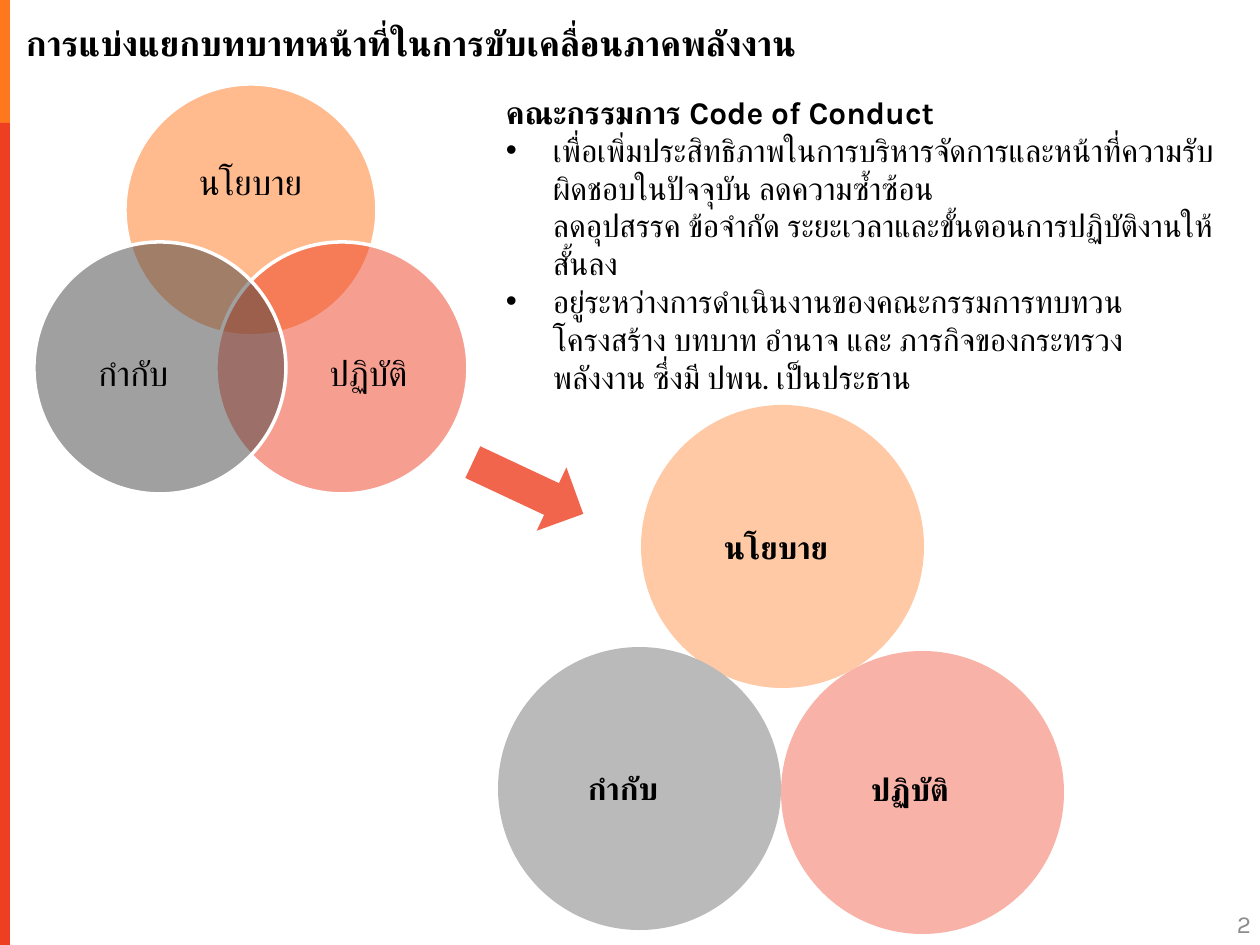
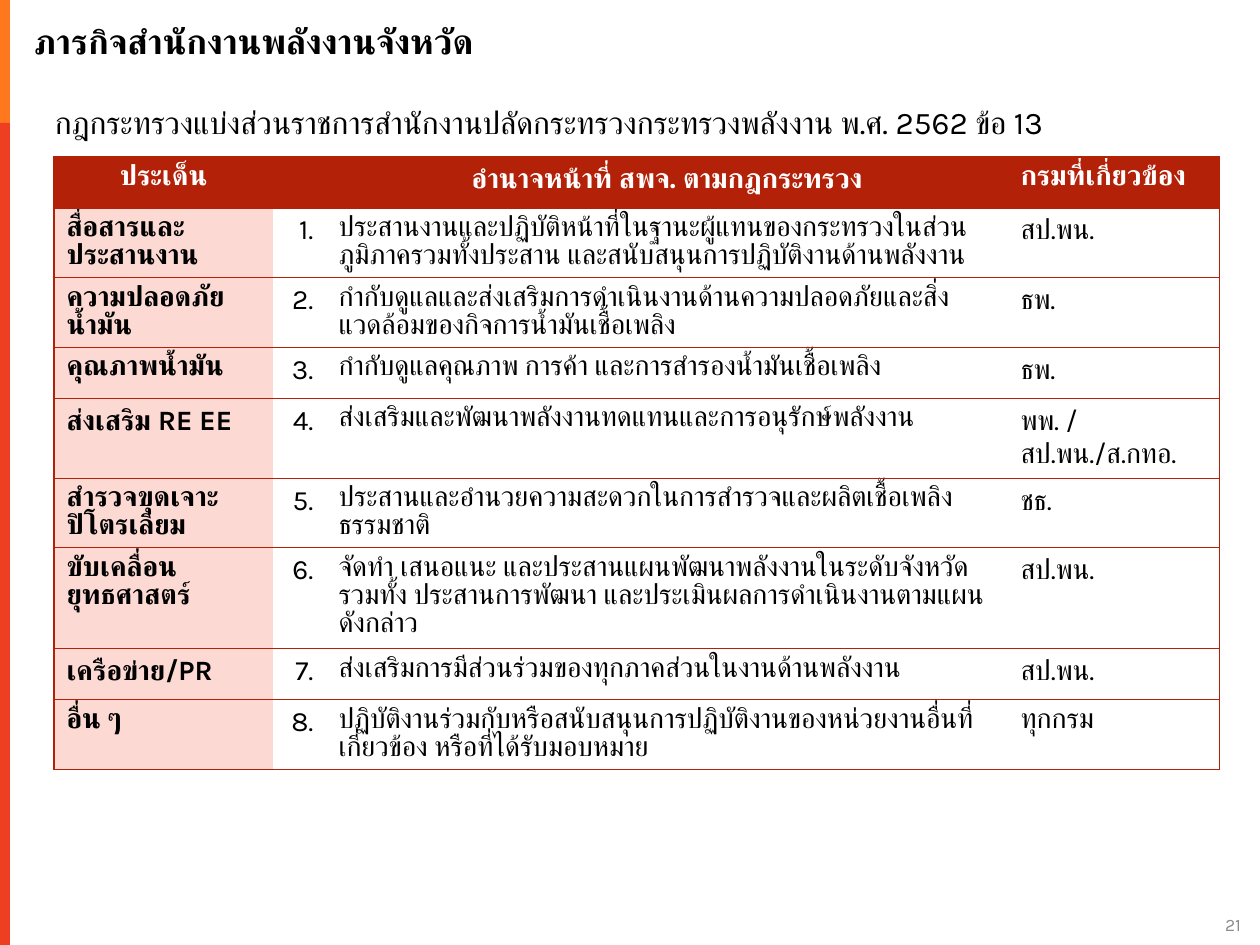
from pptx import Presentation
from pptx.dml.color import RGBColor
from pptx.enum.shapes import MSO_SHAPE
from pptx.enum.text import MSO_ANCHOR, PP_ALIGN
from pptx.oxml.ns import qn
from pptx.util import Emu, Pt
from lxml.etree import SubElement

PX = 914400 / 126
FONT = "Karla"
COLORS = {
    "orange": "FF781E", "red": "EE3F22", "gray": "434343", "arrow": "F2654D",
    "pale_orange": "FFC9A5", "pale_red": "F8B2A7", "pale_gray": "BABABA",
    "header": "B32109", "topic": "FCD9D3", "black": "000000", "white": "FFFFFF",
    "number": "8C8C8C",
}


def write(frame, text, size, color="black", bold=False, align=PP_ALIGN.LEFT, spacing=None):
    frame.word_wrap = True
    frame.text = text
    for paragraph in frame.paragraphs:
        paragraph.alignment = align
        paragraph.line_spacing = spacing
        for run in paragraph.runs:
            run.font.size, run.font.bold, run.font.name = Pt(size), bold, FONT
            run.font.color.rgb = RGBColor.from_string(COLORS[color])
            SubElement(run.font._element, qn("a:cs"), typeface=FONT)


def add_box(slide, box, kind=None, fill=None):
    """Add a plain filled shape, or a text box without margins."""
    place = [Emu(round(n * PX)) for n in box]
    if kind is None:
        frame = slide.shapes.add_textbox(*place).text_frame
        frame.margin_left = frame.margin_right = 0
        frame.margin_top = frame.margin_bottom = 0
        frame.vertical_anchor = MSO_ANCHOR.MIDDLE
        return frame
    shape = slide.shapes.add_shape(kind, *place)
    shape.shadow.inherit = False
    shape.fill.solid()
    shape.fill.fore_color.rgb = RGBColor.from_string(COLORS[fill])
    shape.line.fill.background()
    return shape


prs = Presentation()
prs.slide_width, prs.slide_height = Emu(round(1260 * PX)), Emu(round(945 * PX))

# Shared side band, title and page number
pages = [
    ("การแบ่งแยกบทบาทหน้าที่ในการขับเคลื่อนภาคพลังงาน", (26, 7, 900, 71), "2", 14, (958, 888, 293, 50)),
    ("ภารกิจสำนักงานพลังงานจังหวัด", (34, 5, 1226, 71), "21", 10, (1141, 916, 100, 19)),
]
slides = []
for title, title_box, number, number_size, number_box in pages:
    slide = prs.slides.add_slide(prs.slide_layouts[6])
    add_box(slide, (0, 0, 10, 620), MSO_SHAPE.RECTANGLE, "orange")
    add_box(slide, (0, 123, 10, 822), MSO_SHAPE.RECTANGLE, "red")
    write(add_box(slide, title_box), title, 20, bold=True)
    number_frame = add_box(slide, number_box)
    number_frame.vertical_anchor = MSO_ANCHOR.BOTTOM
    write(number_frame, number, number_size, "number", align=PP_ALIGN.RIGHT)
    slides.append(slide)
roles, mission = slides

# Overlapping roles today
overlapping = [
    ("นโยบาย", "orange", (125, 84), (158, 128, 185, 113)),
    ("ปฏิบัติ", "red", (216, 242), (293, 306, 151, 139)),
    ("กำกับ", "gray", (34, 242), (58, 306, 151, 139)),
]
for role, color, corner, label_box in overlapping:
    circle = add_box(roles, (*corner, 252, 252), MSO_SHAPE.OVAL, color)
    circle.line.color.rgb = RGBColor.from_string(COLORS["white"])
    circle.line.width = Pt(2)
    rgb = circle.fill._xPr.find(qn("a:solidFill"))[0]
    SubElement(rgb, qn("a:alpha"), val="50000")
    write(add_box(roles, label_box), role, 20, align=PP_ALIGN.CENTER, spacing=0.9)

arrow = add_box(roles, (467, 453, 122, 70), MSO_SHAPE.RIGHT_ARROW, "arrow")
arrow.rotation = 25.1

# Separated roles: all circles first, then their labels
separated = [
    ("นโยบาย", "pale_orange", (641, 405), (724, 522, 140, 50)),
    ("ปฏิบัติ", "pale_red", (781, 651), (871, 764, 140, 50)),
    ("กำกับ", "pale_gray", (498, 647), (588, 763, 140, 50)),
]
for role, color, corner, label_box in separated:
    add_box(roles, (*corner, 283, 283), MSO_SHAPE.OVAL, color)
for role, color, corner, label_box in separated:
    write(add_box(roles, label_box), role, 18, bold=True)

# Committee notes
committee = add_box(roles, (506, 93, 708, 305))
committee.vertical_anchor = MSO_ANCHOR.TOP
write(committee, "\n".join([
    "คณะกรรมการ Code of Conduct",
    "เพื่อเพิ่มประสิทธิภาพในการบริหารจัดการและหน้าที่ความรับผิดชอบในปัจจุบัน ลดความซ้ำซ้อน\v"
    "ลดอุปสรรค ข้อจำกัด ระยะเวลาและขั้นตอนการปฏิบัติงานให้สั้นลง",
    "อยู่ระหว่างการดำเนินงานของคณะกรรมการทบทวนโครงสร้าง บทบาท อำนาจ และ ภารกิจของกระทรวงพลังงาน "
    "ซึ่งมี ปพน. เป็นประธาน",
]), 18)
heading, *points = committee.paragraphs
heading.runs[0].font.bold = True
for point in points:
    properties = point._p.get_or_add_pPr()
    properties.set("marL", str(round(47 * PX)))
    properties.set("indent", str(round(-47 * PX)))
    SubElement(properties, qn("a:buFont"), typeface="Arial")
    SubElement(properties, qn("a:buChar"), char="•")

# Regulation line
regulation = add_box(mission, (55, 95, 1187, 60))
regulation.vertical_anchor = MSO_ANCHOR.TOP
write(regulation, "กฎกระทรวงแบ่งส่วนราชการสำนักงานปลัดกระทรวงกระทรวงพลังงาน พ.ศ. 2562 ข้อ 13", 18, spacing=1.22)

# Duties table: topic, duty, department, row height
duties = [
    ("สื่อสารและประสานงาน", "ประสานงานและปฏิบัติหน้าที่ในฐานะผู้แทนของกระทรวงในส่วนภูมิภาครวมทั้งประสาน และสนับสนุนการปฏิบัติงานด้านพลังงาน", "สป.พน.", 69),
    ("ความปลอดภัย\vน้ำมัน", "กํากับดูแลและส่งเสริมการดําเนินงานด้านความปลอดภัยและสิ่งแวดล้อมของกิจการน้ำมันเชื้อเพลิง", "ธพ.", 68),
    ("คุณภาพน้ำมัน", "กํากับดูแลคุณภาพ การค้า และการสํารองน้ำมันเชื้อเพลิง", "ธพ.", 51),
    ("ส่งเสริม RE EE", "ส่งเสริมและพัฒนาพลังงานทดแทนและการอนุรักษ์พลังงาน", "พพ. / สป.พน./ส.กทอ.", 78),
    ("สำรวจขุดเจาะ\vปิโตรเลียม", "ประสานและอํานวยความสะดวกในการสํารวจและผลิตเชื้อเพลิงธรรมชาติ", "ชธ.", 69),
    ("ขับเคลื่อนยุทธศาสตร์", "จัดทำ เสนอแนะ และประสานแผนพัฒนาพลังงานในระดับจังหวัด รวมทั้ง ประสานการพัฒนา และประเมินผลการดําเนินงานตามแผนดังกล่าว", "สป.พน.", 101),
    ("เครือข่าย/PR", "ส่งเสริมการมีส่วนร่วมของทุกภาคส่วนในงานด้านพลังงาน", "สป.พน.", 51),
    ("อื่น ๆ", "ปฏิบัติงานร่วมกับหรือสนับสนุนการปฏิบัติงานของหน่วยงานอื่นที่เกี่ยวข้อง หรือที่ได้รับมอบหมาย", "ทุกกรม", 69),
]
rows = [("ประเด็น", "", "อำนาจหน้าที่ สพจ. ตามกฎกระทรวง", "กรมที่เกี่ยวข้อง")]
rows += [(topic, f"{i}.", duty, department) for i, (topic, duty, department, _) in enumerate(duties, 1)]
heights = [51] + [duty[-1] for duty in duties]
widths = [219, 53, 682, 212]
place = [Emu(round(n * PX)) for n in (54, 157, sum(widths), sum(heights))]
table = mission.shapes.add_table(len(rows), len(widths), *place).table
table.horz_banding = False
table._tbl.tblPr[0].text = "{2D5ABB26-0587-4C30-8999-92F81FD0307C}"
for column, width in zip(table.columns, widths):
    column.width = Emu(round(width * PX))

for r, (texts, height) in enumerate(zip(rows, heights)):
    table.rows[r].height = Emu(round(height * PX))
    for c, text in enumerate(texts):
        cell = table.cell(r, c)
        align = PP_ALIGN.LEFT
        if r == 0 and c < 3:
            align = PP_ALIGN.CENTER
        elif c == 1:
            align = PP_ALIGN.RIGHT
        # Purely Thai cells are set tighter than cells with Latin signs
        has_latin = any(sign.isascii() and not sign.isspace() for sign in text)
        write(cell.text_frame, text, 16, "white" if r == 0 else "black", r == 0 or c == 0,
              align, None if has_latin else 0.85)
        # Rules between rows and around the table
        sides = ["lnL"] * (c == 0) + ["lnR"] * (c == 3) + ["lnT", "lnB"]
        for side in sides:
            border = SubElement(cell._tc.get_or_add_tcPr(), qn(f"a:{side}"), w=str(Pt(0.75)))
            SubElement(SubElement(border, qn("a:solidFill")), qn("a:srgbClr"), val=COLORS["header"])
        if r == 0 or c == 0:
            cell.fill.solid()
            cell.fill.fore_color.rgb = RGBColor.from_string(COLORS["header" if r == 0 else "topic"])
        else:
            cell.fill.background()

prs.save("out.pptx")
